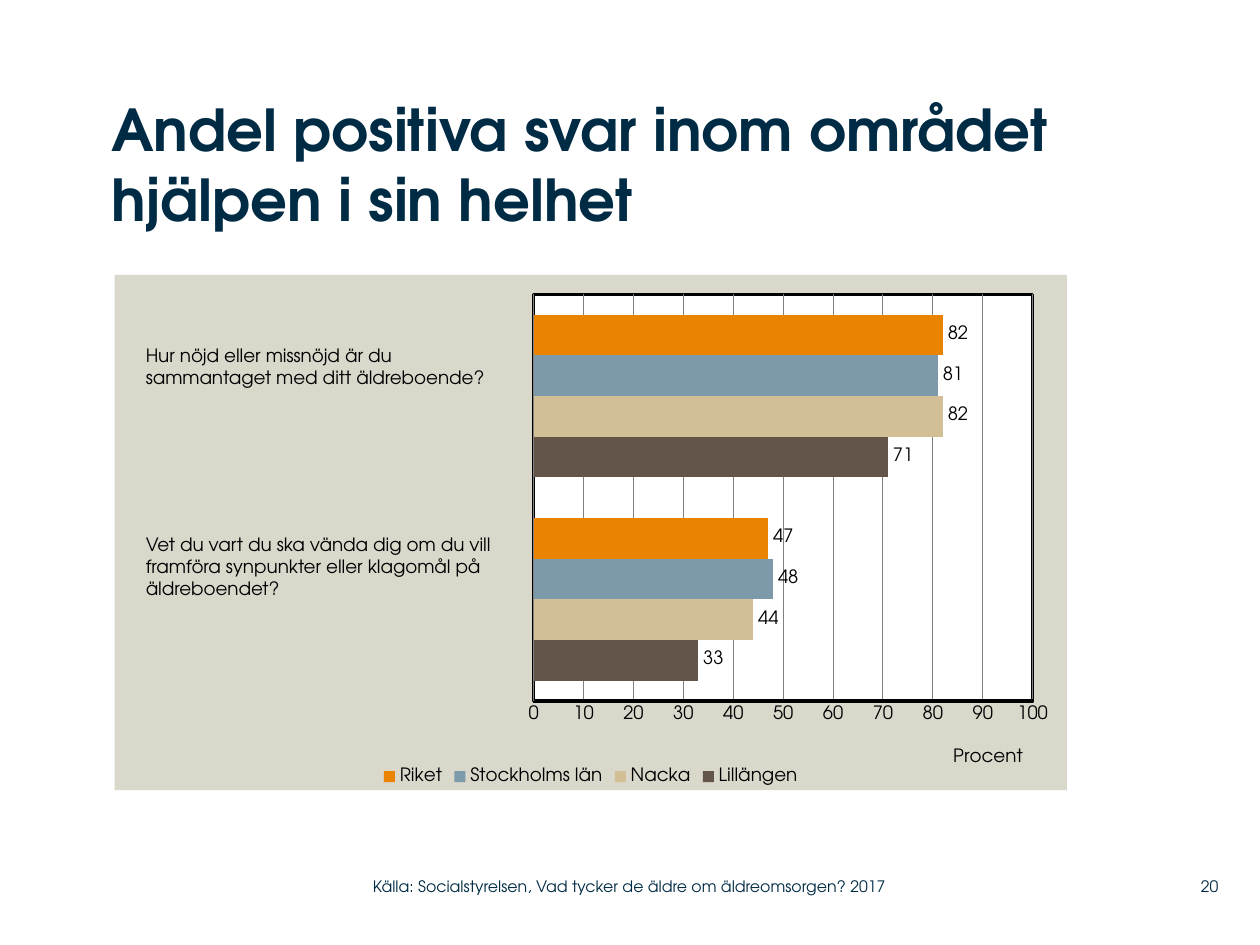
"""Builds the slide on positive answers about elderly care as a whole."""
import pptx
import pptx.chart.data
import pptx.dml.color
import pptx.enum.chart
import pptx.enum.text
import pptx.oxml
import pptx.oxml.ns
import pptx.util
from pptx.util import Cm

FACE = "TeX Gyre Adventor"
NAVY = "002B45"
BLACK = "000000"
CHART_NS = "http://schemas.openxmlformats.org/drawingml/2006/chart"
DRAW_NS = "http://schemas.openxmlformats.org/drawingml/2006/main"


def colour(hex_value):
    """Return the colour for a hex string."""
    return pptx.dml.color.RGBColor.from_string(hex_value)


def style_font(font, size, hex_value, bold=False):
    """Apply the typeface, size, weight and colour to a font."""
    for name, value in {"name": FACE, "size": pptx.util.Pt(size), "bold": bold}.items():
        setattr(font, name, value)
    font.color.rgb = colour(hex_value)


deck = pptx.Presentation()
deck.slide_width, deck.slide_height = Cm(25.4), Cm(19.05)
slide = deck.slides.add_slide(deck.slide_layouts[5])

heading = slide.shapes.title
heading_format = {"left": Cm(2.24), "top": Cm(1.9), "width": Cm(19.3), "height": Cm(3.6)}
for name, value in heading_format.items():
    setattr(heading, name, value)
heading.text_frame.text = "Andel positiva svar inom området hjälpen i sin helhet"
heading_frame = {
    "margin_left": 0, "margin_right": 0, "margin_top": 0, "margin_bottom": 0,
    "vertical_anchor": pptx.enum.text.MSO_ANCHOR.TOP, "word_wrap": True,
    "auto_size": pptx.enum.text.MSO_AUTO_SIZE.NONE,
}
for name, value in heading_frame.items():
    setattr(heading.text_frame, name, value)
heading.text_frame.paragraphs[0].alignment = pptx.enum.text.PP_ALIGN.LEFT
style_font(heading.text_frame.paragraphs[0].runs[0].font, 33, NAVY, True)

areas = [
    ("Lillängen", (33, 71), "635549"),
    ("Nacka", (44, 82), "D3BF96"),
    ("Stockholms län", (48, 81), "7D9AAA"),
    ("Riket", (47, 82), "E98300"),
]
answers = pptx.chart.data.CategoryChartData()
answers.categories = ["1", "2"]
for area, shares, _ in areas:
    answers.add_series(area, shares)
chart = slide.shapes.add_chart(
    pptx.enum.chart.XL_CHART_TYPE.BAR_CLUSTERED,
    Cm(2.31), Cm(5.54), Cm(19.2), Cm(10.39), answers,
).chart
style_font(chart.font, 10.5, BLACK)
chart.has_title = False
chart.has_legend = True
chart.legend.position = pptx.enum.chart.XL_LEGEND_POSITION.BOTTOM
chart.legend.include_in_layout = False
style_font(chart.legend.font, 10.5, BLACK)

bars = chart.plots[0]
for name, value in {"gap_width": 100, "overlap": 0, "vary_by_categories": False}.items():
    setattr(bars, name, value)
for series, (_, _, fill) in zip(bars.series, areas):
    series.format.fill.solid()
    series.format.fill.fore_color.rgb = colour(fill)
    labels = series.data_labels
    labels.show_value = True
    labels.position = pptx.enum.chart.XL_LABEL_POSITION.OUTSIDE_END
    style_font(labels.font, 10.5, BLACK)

chart.category_axis.visible = False
percent = chart.value_axis
percent_format = {
    "minimum_scale": 0, "maximum_scale": 100, "major_unit": 10,
    "has_major_gridlines": True, "has_title": True,
    "major_tick_mark": pptx.enum.chart.XL_TICK_MARK.NONE,
    "minor_tick_mark": pptx.enum.chart.XL_TICK_MARK.NONE,
}
for name, value in percent_format.items():
    setattr(percent, name, value)
style_font(percent.tick_labels.font, 10.5, BLACK)
for line, hex_value, width in [
    (percent.format.line, BLACK, 2),
    (percent.major_gridlines.format.line, "808080", 0.5),
]:
    line.color.rgb = colour(hex_value)
    line.width = pptx.util.Pt(width)
percent.axis_title.text_frame.text = "Procent"
style_font(percent.axis_title.text_frame.paragraphs[0].runs[0].font, 10.5, BLACK)

plot_area = chart._chartSpace.chart.plotArea
for old_layout in plot_area.findall(pptx.oxml.ns.qn("c:layout")):
    plot_area.remove(old_layout)
axis_title = percent.axis_title._element
for old_layout in axis_title.findall(pptx.oxml.ns.qn("c:layout")):
    axis_title.remove(old_layout)
for parent, index, settings in [
    (plot_area, 0, {"layoutTarget": "inner", "xMode": "edge", "yMode": "edge",
                    "x": 0.44, "y": 0.038, "w": 0.524, "h": 0.789}),
    (axis_title, 1, {"xMode": "edge", "yMode": "edge", "x": 0.877, "y": 0.91}),
]:
    values = "".join(f'<c:{key} val="{value}"/>' for key, value in settings.items())
    parent.insert(index, pptx.oxml.parse_xml(
        f'<c:layout xmlns:c="{CHART_NS}"><c:manualLayout>{values}</c:manualLayout></c:layout>'))

frame_line = f'<a:ln w="25400"><a:solidFill><a:srgbClr val="{BLACK}"/></a:solidFill></a:ln>'
for anchor, fill, outline in [
    (plot_area[-1], "FFFFFF", frame_line),
    (chart._chartSpace.chart, "DAD7CB", "<a:ln><a:noFill/></a:ln>"),
]:
    anchor.addnext(pptx.oxml.parse_xml(
        f'<c:spPr xmlns:c="{CHART_NS}" xmlns:a="{DRAW_NS}">'
        f'<a:solidFill><a:srgbClr val="{fill}"/></a:solidFill>{outline}</c:spPr>'))

question = {"word_wrap": True}
footer = {
    "word_wrap": True, "margin_left": 0, "margin_right": 0, "margin_top": 0,
    "margin_bottom": 0, "vertical_anchor": pptx.enum.text.MSO_ANCHOR.MIDDLE,
}
left, right = pptx.enum.text.PP_ALIGN.LEFT, pptx.enum.text.PP_ALIGN.RIGHT
texts = [
    (["Hur nöjd eller missnöjd är du", "sammantaget med ditt äldreboende?"],
     (2.69, 6.81, 7.57, 1.14), question, left, 10.5, BLACK),
    (["Vet du vart du ska vända dig om du vill framföra synpunkter eller klagomål på äldreboendet?"],
     (2.69, 10.62, 7.54, 1.6), question, left, 10.5, BLACK),
    (["20"], (23.37, 17.5, 1.19, 0.74), footer, right, 9, NAVY),
    (["Källa: Socialstyrelsen, Vad tycker de äldre om äldreomsorgen? 2017"],
     (7.52, 17.5, 11.25, 0.74), footer, left, 9, NAVY),
]
for lines, place, frame_format, alignment, size, hex_value in texts:
    frame = slide.shapes.add_textbox(*map(Cm, place)).text_frame
    for name, value in frame_format.items():
        setattr(frame, name, value)
    frame.text = "\n".join(lines)
    for paragraph in frame.paragraphs:
        paragraph.alignment = alignment
        style_font(paragraph.runs[0].font, size, hex_value)

deck.save("out.pptx")
